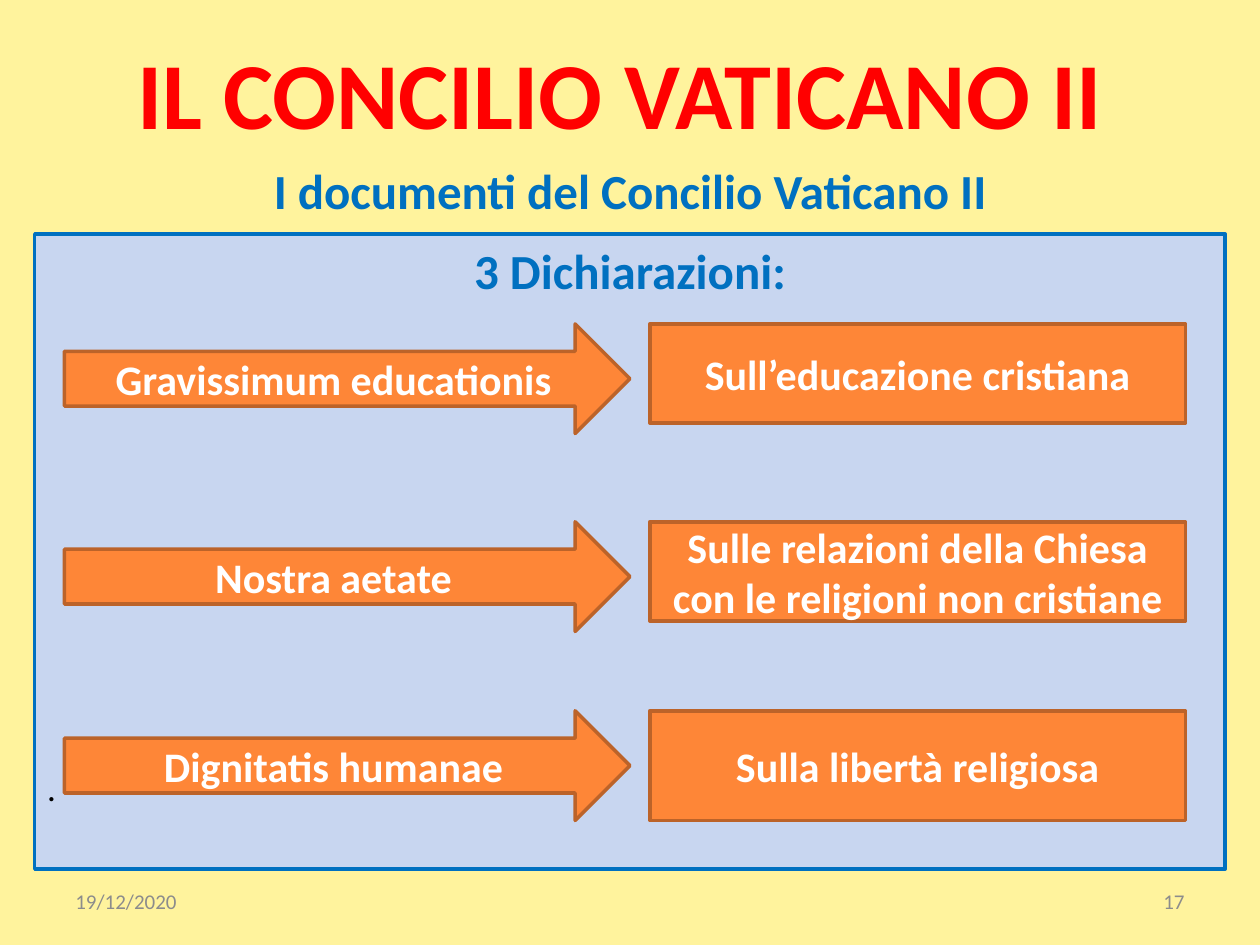
import pptx
import pptx.util
import pptx.dml.color
import pptx.enum.shapes
import pptx.enum.text

Cm = pptx.util.Cm
Pt = pptx.util.Pt
RGBColor = pptx.dml.color.RGBColor
Preset = pptx.enum.shapes.MSO_SHAPE
Align = pptx.enum.text.PP_ALIGN
Anchor = pptx.enum.text.MSO_ANCHOR

FONT = "Calibri"
CREAM = RGBColor(0xFF, 0xF3, 0x9D)
RED = RGBColor(0xFF, 0x00, 0x00)
BLUE = RGBColor(0x00, 0x70, 0xC0)
PALE_BLUE = RGBColor(0xC8, 0xD6, 0xF0)
ORANGE = RGBColor(0xFE, 0x86, 0x37)
BROWN = RGBColor(0xBC, 0x63, 0x29)
WHITE = RGBColor(0xFF, 0xFF, 0xFF)
BLACK = RGBColor(0x00, 0x00, 0x00)
GREY = RGBColor(0x8C, 0x8C, 0x8C)

ARROW_LEFT, ARROW_WIDTH, ARROW_HEIGHT = 1.3, 11.4, 2.21
BOX_LEFT, BOX_WIDTH = 13.1, 10.8

# Document name, its subject, top of the row and height of the subject box (cm)
DECLARATIONS = [
    ("Gravissimum educationis", "Sull’educazione cristiana", 6.53, 2.0),
    ("Nostra aetate",
     "Sulle relazioni della Chiesa con le religioni non cristiane", 10.52, 2.0),
    ("Dignitatis humanae", "Sulla libertà religiosa", 14.33, 2.21),
]


def write(paragraph, text, size, color, bold=True, align=Align.CENTER):
    paragraph.alignment = align
    run = paragraph.add_run()
    run.text = text
    run.font.name = FONT
    run.font.size = Pt(size)
    run.font.bold = bold
    run.font.color.rgb = color


def add_label(slide, position, text, size, color, anchor=Anchor.MIDDLE, **style):
    label = slide.shapes.add_textbox(*map(Cm, position))
    label.text_frame.word_wrap = True
    label.text_frame.vertical_anchor = anchor
    write(label.text_frame.paragraphs[0], text, size, color, **style)


def add_block(slide, preset, position, fill, line, anchor=Anchor.MIDDLE):
    shape = slide.shapes.add_shape(preset, *map(Cm, position))
    shape.shadow.inherit = False
    shape.fill.solid()
    shape.fill.fore_color.rgb = fill
    shape.line.color.rgb = line
    shape.line.width = Pt(2)
    shape.text_frame.word_wrap = True
    shape.text_frame.vertical_anchor = anchor
    return shape.text_frame


def add_panel(slide):
    frame = add_block(slide, Preset.RECTANGLE, (0.7, 4.72, 24.0, 12.8),
                      PALE_BLUE, BLUE, Anchor.TOP)
    write(frame.paragraphs[0], "3 Dichiarazioni:", 28, BLUE)
    closing = frame.add_paragraph()
    closing.space_before = Pt(267)
    write(closing, ".", 20, BLACK, bold=False, align=Align.JUSTIFY)


def add_declaration(slide, name, subject, top, box_height):
    arrow = (ARROW_LEFT, top, ARROW_WIDTH, ARROW_HEIGHT)
    box = (BOX_LEFT, top, BOX_WIDTH, box_height)
    for preset, position, text in ((Preset.RIGHT_ARROW, arrow, name),
                                   (Preset.RECTANGLE, box, subject)):
        frame = add_block(slide, preset, position, ORANGE, BROWN)
        write(frame.paragraphs[0], text, 24, WHITE)


def main():
    presentation = pptx.Presentation()
    presentation.slide_width = Cm(25.4)
    presentation.slide_height = Cm(19.05)
    slide = presentation.slides.add_slide(presentation.slide_layouts[6])
    slide.background.fill.solid()
    slide.background.fill.fore_color.rgb = CREAM

    # Title and panel
    add_label(slide, (1.7, 0.74, 21.59, 2.21), "IL CONCILIO VATICANO II", 54, RED)
    add_panel(slide)

    # Footer
    add_label(slide, (1.27, 17.66, 5.93, 1.01), "19/12/2020", 12, GREY,
              bold=False, align=Align.LEFT)
    add_label(slide, (18.2, 17.66, 5.93, 1.01), "17", 12, GREY,
              bold=False, align=Align.RIGHT)

    # Subtitle
    add_label(slide, (2.7, 3.12, 20.0, 1.45),
              "I documenti del Concilio Vaticano II", 28, BLUE, anchor=Anchor.TOP)

    # One arrow and one box per declaration
    for declaration in DECLARATIONS:
        add_declaration(slide, *declaration)

    presentation.save("out.pptx")


if __name__ == "__main__":
    main()
